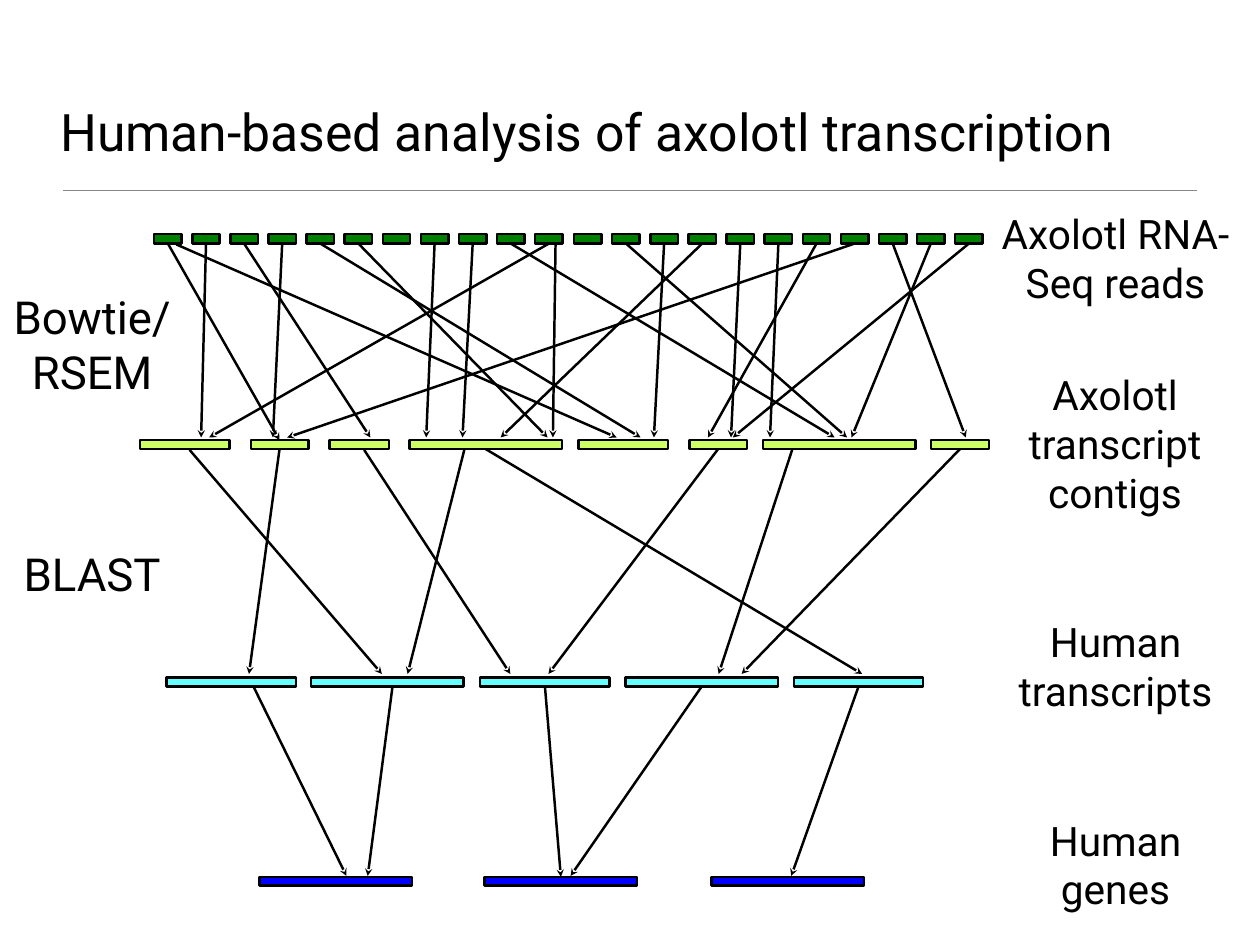
from collections import namedtuple
from pptx import Presentation
from pptx import util as u
from pptx.dml.color import RGBColor
from pptx.enum import shapes, text
from pptx.oxml.ns import qn
from lxml import etree

# Content: lengths in px, 100 px to the inch
SIZE = (1422, 1067)
TITLE = ("Human-based analysis of axolotl transcription", (62, 36, 1297, 153))
RULE = ((71, 215), (1351, 215))

LABELS = [  # lines, box, size name
    (["Axolotl RNA-Seq reads"], (1114, 225, 290, 121), "label"),
    (["Axolotl transcript contigs"], (1125, 407, 267, 176), "label"),
    (["Human transcripts"], (1145, 686, 228, 121), "label"),
    (["Human genes"], (1178, 910, 162, 121), "label"),
    (["Bowtie/", "RSEM"], (-3, 315, 214, 135), "step"),
    (["BLAST"], (-3, 606, 214, 72), "step"),
]

READS = [(174 + round(904 * i / 21), 31) for i in range(22)]
ROWS = [  # name, top, height, bars as (left, width)
    ("reads", 264, 11, READS),
    ("contigs", 497, 10, [(158, 101), (283, 65), (372, 67), (462, 172),
                          (653, 101), (778, 65), (861, 172), (1051, 65)]),
    ("transcripts", 765, 10, [(188, 146), (351, 172), (542, 146),
                              (706, 172), (896, 146)]),
    ("genes", 990, 10, [(293, 172), (547, 172), (803, 172)]),
]

LINKS = [  # start y, end y, (start x, end x) from each row to the next
    (276, 494, [(188, 313), (199, 696), (231, 227), (273, 418), (318, 308),
                (361, 723), (405, 618), (490, 481), (532, 522), (576, 942),
                (619, 236), (627, 624), (708, 956), (747, 738), (791, 565),
                (834, 825), (879, 869), (923, 799), (966, 324), (1007, 1090),
                (1051, 961), (1093, 827)]),
    (508, 761, [(214, 431), (317, 281), (411, 576), (524, 460), (547, 973),
                (813, 619), (894, 811), (1085, 837)]),
    (775, 989, [(286, 391), (443, 415), (613, 630), (792, 644), (972, 893)]),
]
NEAR = 3  # an end this close to a bar's middle is joined to it

# Theme
Theme = namedtuple("Theme", "font sizes ink rule fills line thin")
THEME = Theme("Roboto", {"title": 42, "label": 33, "step": 37},
              "000000", "888888",
              {"reads": "008000", "contigs": "CCFF66",
               "transcripts": "66FFFF", "genes": "0000FF"}, 2, 1)


def px(n):
    return u.Emu(n * 9144)


def rgb(code):
    return RGBColor.from_string(code)


def write(frame, lines, size, align, inset):
    frame.word_wrap = True
    frame.auto_size = text.MSO_AUTO_SIZE.NONE
    frame.vertical_anchor = text.MSO_ANCHOR.BOTTOM
    frame.margin_left = frame.margin_right = px(inset)
    frame.margin_top = frame.margin_bottom = px(inset)
    frame.text = "\n".join(lines)
    for par in frame.paragraphs:
        par.alignment = align
        par.font.name = THEME.font
        par.font.size = u.Pt(THEME.sizes[size])
        par.font.color.rgb = rgb(THEME.ink)


def draw_bar(slide, box, fill):
    bar = slide.shapes.add_shape(shapes.MSO_SHAPE.RECTANGLE, *map(px, box))
    bar.shadow.inherit = False
    bar.fill.solid()
    bar.fill.fore_color.rgb = rgb(fill)
    bar.line.color.rgb = rgb(THEME.ink)
    bar.line.width = u.Pt(THEME.line)
    return bar


def draw_line(slide, start, end, color, width):
    line = slide.shapes.add_connector(
        shapes.MSO_CONNECTOR.STRAIGHT, *map(px, start + end))
    line.line.color.rgb = rgb(color)
    line.line.width = u.Pt(width)
    etree.SubElement(line._element.spPr, qn("a:effectLst"))
    return line


def find_bar(bars, x):
    for bar in bars:
        if abs(bar.left + bar.width / 2 - px(x)) <= px(NEAR):
            return bar
    return None


def draw_arrow(slide, start, end, above, below):
    line = draw_line(slide, start, end, THEME.ink, THEME.line)
    etree.SubElement(line.line._get_or_add_ln(), qn("a:tailEnd"), type="stealth")
    source, target = find_bar(above, start[0]), find_bar(below, end[0])
    if source:
        line.begin_connect(source, 2)
    if target:
        line.end_connect(target, 0)


def main():
    prs = Presentation()
    prs.slide_width, prs.slide_height = map(px, SIZE)
    slide = prs.slides.add_slide(prs.slide_layouts[5])

    # Title and rule
    name, box = TITLE
    title = slide.shapes.title
    title.left, title.top, title.width, title.height = map(px, box)
    write(title.text_frame, [name], "title", text.PP_ALIGN.LEFT, 6)
    draw_line(slide, *RULE, THEME.rule, THEME.thin)

    # Rows of bars
    rows = [[draw_bar(slide, (left, top, wide, high), THEME.fills[kind])
             for left, wide in bars] for kind, top, high, bars in ROWS]

    # Arrows from each row to the next
    for (y1, y2, pairs), above, below in zip(LINKS, rows, rows[1:]):
        for x1, x2 in pairs:
            draw_arrow(slide, (x1, y1), (x2, y2), above, below)

    # Labels
    for lines, box, size in LABELS:
        label = slide.shapes.add_textbox(*map(px, box))
        write(label.text_frame, lines, size, text.PP_ALIGN.CENTER, 0)

    prs.save("out.pptx")


if __name__ == "__main__":
    main()
